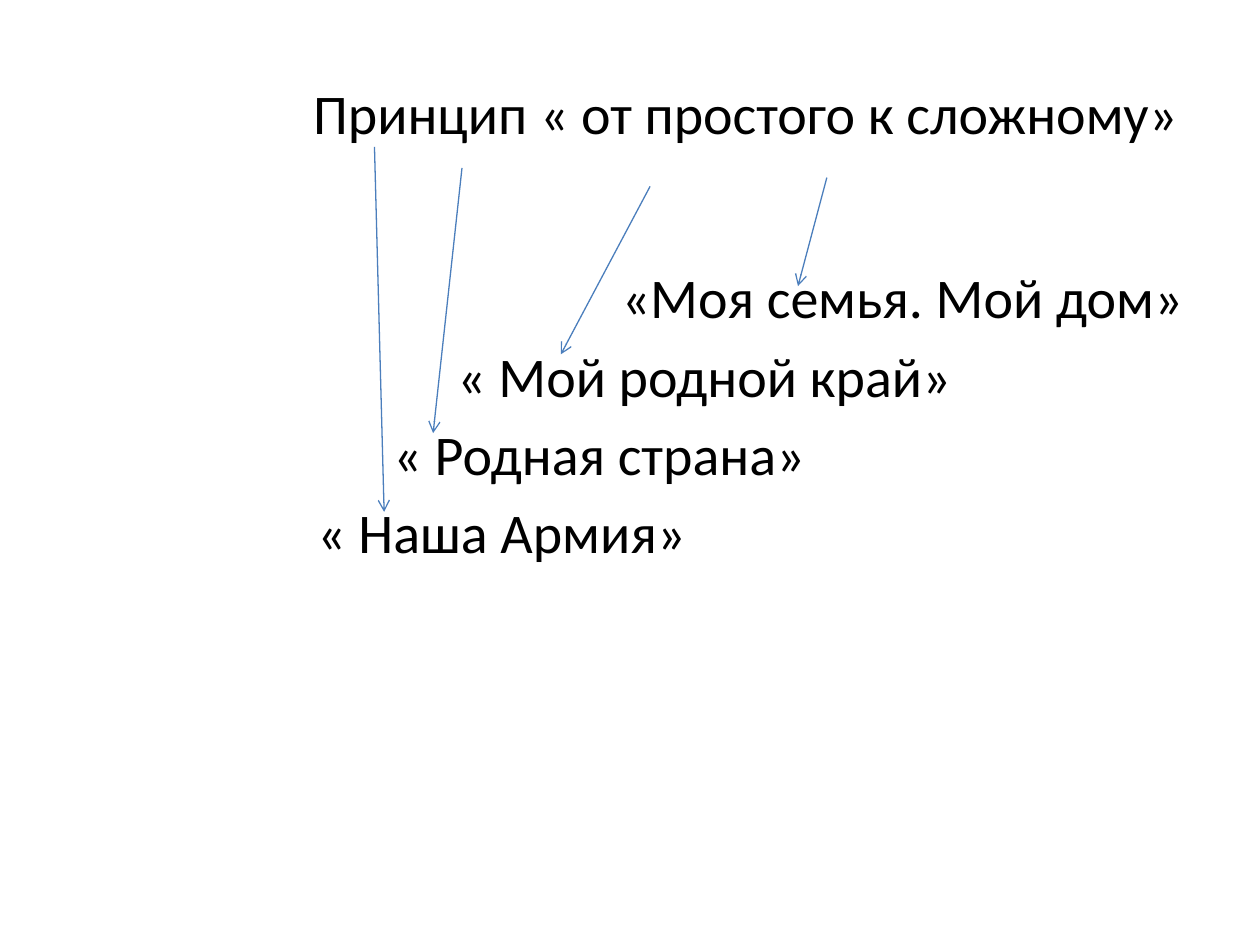
import pptx
import pptx.util
import pptx.dml.color
import pptx.enum.shapes
import pptx.enum.text
from lxml import etree
from pptx.oxml.ns import qn

Pt = pptx.util.Pt
BLACK = pptx.dml.color.RGBColor(0x00, 0x00, 0x00)
BLUE = pptx.dml.color.RGBColor(0x4B, 0x7E, 0xBC)

TITLE = "Принцип « от простого к сложному»"
# text, left indent
TOPICS = [
    ("«Моя семья. Мой дом»", 174),
    ("« Мой родной край»", 80),
    ("« Родная страна»", 43.5),
    ("« Наша Армия»", 0),
]
# start x, start y, end x, end y
ARROWS = [
    (371.5, 106.5, 320.5, 202.5),
    (472.5, 101.5, 456, 163.5),
    (264, 96, 247.5, 247.5),
    (214, 84, 219.5, 292.5),
]


def place(shape, left, top, width, height):
    shape.left, shape.top = Pt(left), Pt(top)
    shape.width, shape.height = Pt(width), Pt(height)


def style(para):
    para.font.size = Pt(32)
    para.font.name = "Calibri"
    para.font.color.rgb = BLACK
    for run in para.runs:
        run.font.size = Pt(32)
        run.font.name = "Calibri"
        run.font.color.rgb = BLACK


def add_title(slide):
    title = slide.shapes.title
    place(title, 168.5, 16.5, 515.5, 95)
    frame = title.text_frame
    frame.text = TITLE
    frame.vertical_anchor = pptx.enum.text.MSO_ANCHOR.MIDDLE
    frame.paragraphs[0].alignment = pptx.enum.text.PP_ALIGN.CENTER
    style(frame.paragraphs[0])


def add_topics(slide):
    body = slide.placeholders[1]
    place(body, 174, 146.5, 510, 382.5)
    frame = body.text_frame
    frame.margin_right = 0
    frame.text = "\n".join(text for text, _ in TOPICS)
    for i, (para, (_, left)) in enumerate(zip(frame.paragraphs, TOPICS)):
        props = para._p.get_or_add_pPr()
        props.set("marL", str(Pt(left)))
        props.set("indent", "0")
        etree.SubElement(props, qn("a:buNone"))
        para.space_before = Pt(6.4 if i else 0)
        style(para)


def add_arrow(slide, ends):
    kind = pptx.enum.shapes.MSO_CONNECTOR.STRAIGHT
    arrow = slide.shapes.add_connector(kind, *map(Pt, ends))
    arrow.line.color.rgb = BLUE
    arrow.line.width = Pt(0.75)
    line = arrow.line._get_or_add_ln()
    etree.SubElement(line, qn("a:tailEnd"), type="arrow")
    etree.SubElement(arrow._element.spPr, qn("a:effectLst"))


def main():
    deck = pptx.Presentation()
    deck.slide_width, deck.slide_height = Pt(720), Pt(540)
    slide = deck.slides.add_slide(deck.slide_layouts[1])
    add_title(slide)
    add_topics(slide)
    for ends in ARROWS:
        add_arrow(slide, ends)
    deck.save("out.pptx")


if __name__ == "__main__":
    main()
